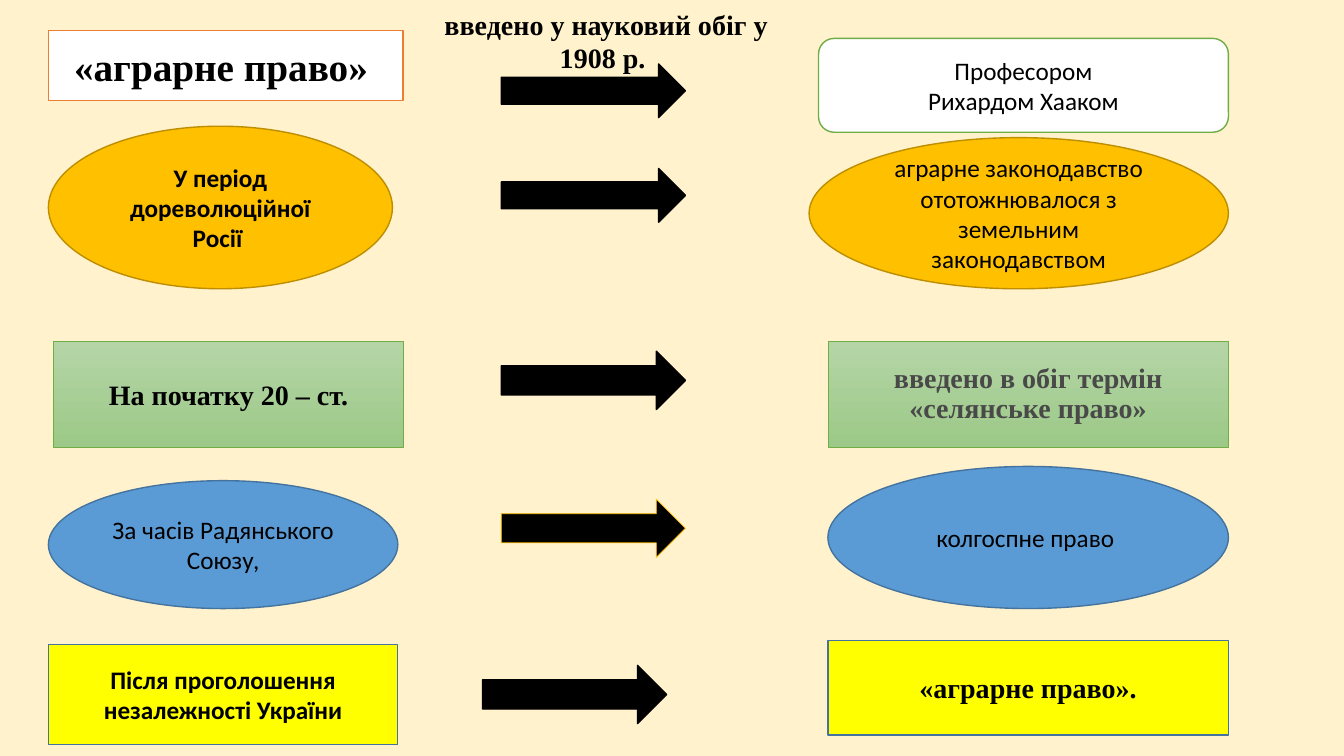
import dataclasses

import pptx
import pptx.dml.color
import pptx.enum.shapes
import pptx.enum.text
import pptx.util

SHAPES = pptx.enum.shapes.MSO_SHAPE


@dataclasses.dataclass(frozen=True)
class Theme:
    """Colours, fonts and type sizes of the slide."""
    background: str = "FFF2CC"
    ink: str = "000000"
    grey_ink: str = "494949"
    arrow_edge: str = "000000"
    white: str = "FFFFFF"
    orange: str = "ED7D31"
    green: str = "70AD47"
    green_fade: tuple = ("B5D5A7", "9CC987")
    amber: str = "FFC000"
    amber_edge: str = "BD8E00"
    blue: str = "5B9BD5"
    blue_edge: str = "43739E"
    yellow: str = "FFFF00"
    sans: str = "Calibri"
    serif: str = "Times New Roman"
    headline: int = 28
    term: int = 20
    body: int = 18


THEME = Theme()
WIDTH, HEIGHT = pptx.util.Inches(13.33), pptx.util.Inches(7.5)
COLUMN, ROW = WIDTH / 100, HEIGHT / 100
LEFT_EDGE, ARROW_EDGE, RIGHT_EDGE = 3.6, 37.3, 91.4
ARROW_WIDTH = 13.7


def rgb(code):
    """Turn a hex code into a colour."""
    return pptx.dml.color.RGBColor.from_string(code)


def place(box):
    """Turn a box in grid columns and rows into slide lengths."""
    left, top, width, height = box
    return [round(n) for n in (left * COLUMN, top * ROW, width * COLUMN, height * ROW)]


def write(frame, text, size=THEME.body, font=THEME.sans, bold=False,
          color=THEME.ink, spacing=None, middle=True):
    """Write centred paragraphs, one per line of text."""
    anchors = pptx.enum.text.MSO_ANCHOR
    frame.word_wrap = True
    frame.vertical_anchor = anchors.MIDDLE if middle else anchors.TOP
    for index, line in enumerate(text.split("\n")):
        paragraph = frame.add_paragraph() if index else frame.paragraphs[0]
        paragraph.alignment = pptx.enum.text.PP_ALIGN.CENTER
        if spacing:
            paragraph.line_spacing = spacing
        run = paragraph.add_run()
        run.text = line
        run.font.size = pptx.util.Pt(size)
        run.font.name = font
        run.font.bold = bold
        run.font.color.rgb = rgb(color)


def draw(slide, kind, box, fill, edge, weight=1):
    """Draw a filled and outlined shape in a box."""
    shape = slide.shapes.add_shape(kind, *place(box))
    shape.shadow.inherit = False
    if isinstance(fill, tuple):
        shape.fill.gradient()
        shape.fill.gradient_angle = 270
        for stop, code in zip(shape.fill.gradient_stops, fill):
            stop.color.rgb = rgb(code)
    else:
        shape.fill.solid()
        shape.fill.fore_color.rgb = rgb(fill)
    shape.line.color.rgb = rgb(edge)
    shape.line.width = pptx.util.Pt(weight)
    return shape


def add_stage(slide, band, period, law, arrow):
    """Place a period, an arrow and its law in a band of the slide."""
    top, height = band
    for cell, on_right in ((period, False), (law, True)):
        drop, width, share = cell["size"]
        left = RIGHT_EDGE - width if on_right else LEFT_EDGE + cell.get("indent", 0)
        shape = draw(slide, cell["kind"], (left, top + drop * height, width, share * height),
                     *cell["paint"])
        write(shape.text_frame, cell["text"], **cell.get("style", {}))
    draw(slide, SHAPES.RIGHT_ARROW,
         (ARROW_EDGE + arrow.get("shift", 0), top + arrow["drop"] * height,
          ARROW_WIDTH, arrow["rows"]),
         THEME.ink, arrow.get("edge", THEME.arrow_edge), arrow.get("weight", 1))


def add_caption(slide, box, text):
    """Place the caption above the first arrow."""
    caption = slide.shapes.add_textbox(*place(box))
    write(caption.text_frame, text, middle=False, **TERM)


TERM = dict(size=THEME.term, font=THEME.serif, bold=True)
AMBER = (THEME.amber, THEME.amber_edge)
GREEN = (THEME.green_fade, THEME.green, 0.5)
BLUE = (THEME.blue, THEME.blue_edge)
YELLOW = (THEME.yellow, THEME.blue_edge)

STAGES = [
    dict(band=(4, 13.5),
         period=dict(kind=SHAPES.RECTANGLE, size=(0, 26.4, 0.69), text="«аграрне право» ",
                     paint=(THEME.white, THEME.orange),
                     style=dict(TERM, size=THEME.headline)),
         law=dict(kind=SHAPES.ROUNDED_RECTANGLE, size=(0.08, 30.5, 0.92),
                  text="Професором\nРихардом Хааком", paint=(THEME.white, THEME.green)),
         arrow=dict(drop=0.33, rows=7.1)),
    dict(band=(16.7, 21.5),
         period=dict(kind=SHAPES.OVAL, size=(0, 25.6, 1), paint=AMBER,
                     text="У період дореволюційної Росії ", style=dict(bold=True)),
         law=dict(kind=SHAPES.OVAL, size=(0.07, 31.2, 0.93), paint=AMBER,
                  text="аграрне законодавство ототожнювалося з земельним законодавством"),
         arrow=dict(drop=0.26, rows=7.1)),
    dict(band=(45.2, 14),
         period=dict(kind=SHAPES.RECTANGLE, size=(0, 26, 1), indent=0.4, paint=GREEN,
                     text="На початку 20 – ст.", style=TERM),
         law=dict(kind=SHAPES.RECTANGLE, size=(0, 29.8, 1), paint=GREEN,
                  text="введено в обіг термін «селянське право»",
                  style=dict(TERM, color=THEME.grey_ink, spacing=0.9)),
         arrow=dict(drop=0.09, rows=7.7)),
    dict(band=(61.7, 18.8),
         period=dict(kind=SHAPES.OVAL, size=(0.1, 26, 0.9), paint=BLUE,
                     text="За часів Радянського Союзу,"),
         law=dict(kind=SHAPES.OVAL, size=(0, 29.8, 1), paint=BLUE, text="колгоспне право "),
         arrow=dict(drop=0.23, rows=7.7, edge=THEME.amber, weight=0.5)),
    dict(band=(84.7, 13.8),
         period=dict(kind=SHAPES.RECTANGLE, size=(0.04, 26, 0.96), paint=YELLOW,
                     text="Після проголошення незалежності України",
                     style=dict(bold=True)),
         law=dict(kind=SHAPES.RECTANGLE, size=(0, 29.8, 0.91), paint=YELLOW,
                  text="«аграрне право».", style=TERM),
         arrow=dict(drop=0.24, rows=7.7, shift=-1.4)),
]


def main():
    """Build the slide and save it."""
    deck = pptx.Presentation()
    deck.slide_width, deck.slide_height = WIDTH, HEIGHT
    slide = deck.slides.add_slide(deck.slide_layouts[6])
    slide.background.fill.solid()
    slide.background.fill.fore_color.rgb = rgb(THEME.background)
    for stage in STAGES:
        add_stage(slide, **stage)
    add_caption(slide, (30.1, 0.3, 30, 10.3), "введено у науковий обіг у 1908 р. ")
    deck.save("out.pptx")


if __name__ == "__main__":
    main()
